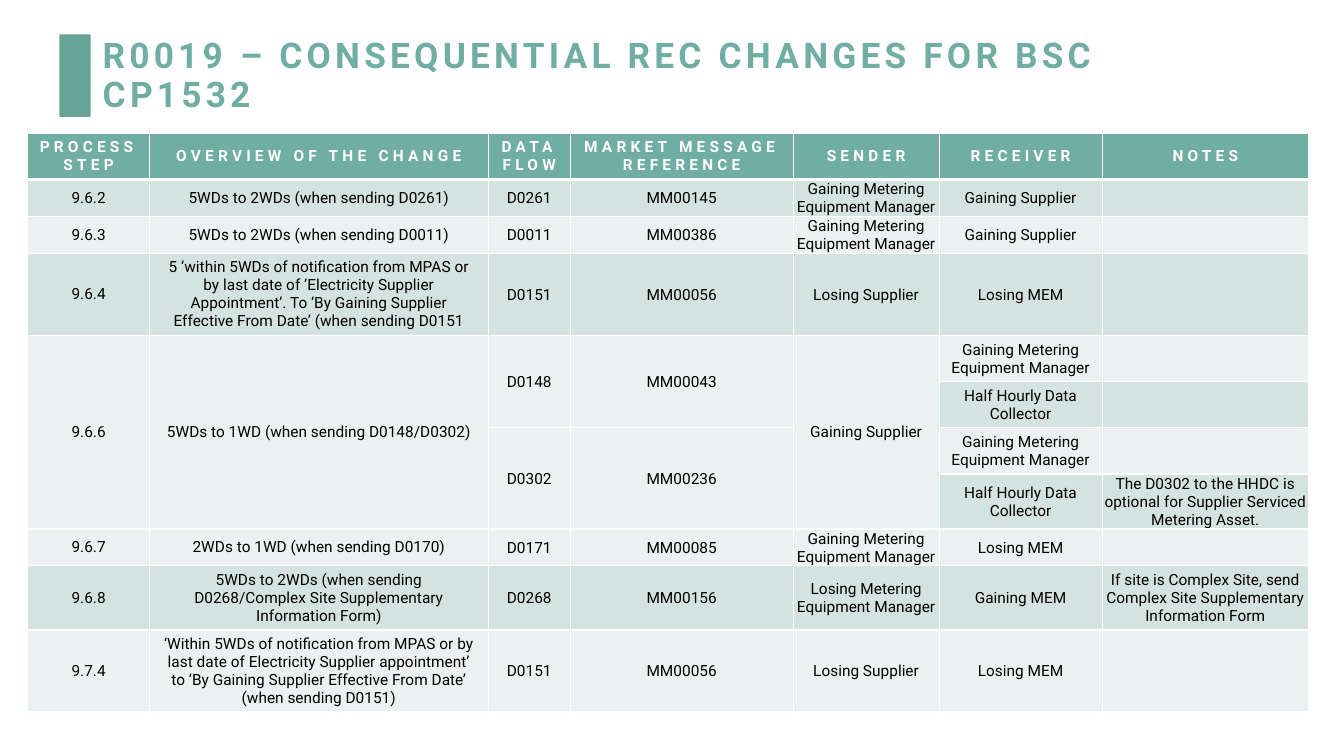
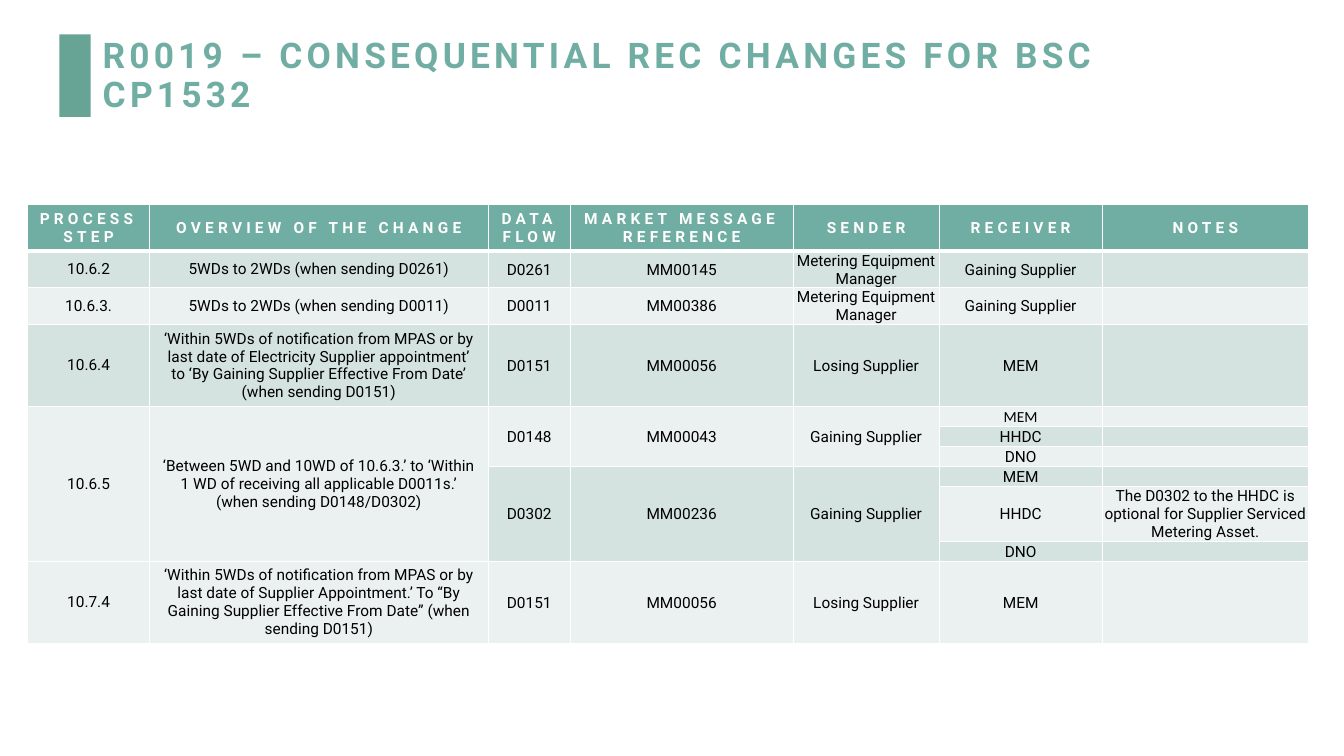
from lxml import etree
from pptx import Presentation
from pptx.dml.color import RGBColor
from pptx.enum.shapes import MSO_SHAPE
from pptx.enum.text import MSO_ANCHOR, MSO_AUTO_SIZE, PP_ALIGN
from pptx.oxml.ns import qn
from pptx.util import Pt

RECTANGLE = MSO_SHAPE.RECTANGLE
MIDDLE = MSO_ANCHOR.MIDDLE
NO_AUTOFIT = MSO_AUTO_SIZE.NONE
LEFT, CENTER = PP_ALIGN.LEFT, PP_ALIGN.CENTER

TEAL = RGBColor(0x70, 0xAD, 0xA3)
DARK_TEAL = RGBColor(0x68, 0xA4, 0x95)
BAND_DARK = RGBColor(0xD5, 0xE3, 0xE0)
BAND_LIGHT = RGBColor(0xEB, 0xF1, 0xF0)
WHITE = RGBColor(0xFF, 0xFF, 0xFF)
BLACK = RGBColor(0x00, 0x00, 0x00)

FONT = "Roboto"
SECOND_FONT = "Calibri"
TABLE_SIZE = 11
TITLE_ONLY = 5

TITLE = "R0019 – CONSEQUENTIAL REC CHANGES FOR BSC CP1532"
TITLE_BOX = (66.2, 28.8, 730.8, 51.8)
TITLE_BAR = (42.5, 24.5, 22.3, 59)

TABLE_LEFT = 19.8
COLUMN_WIDTHS = [87, 242, 58.5, 159.3, 104.3, 116.4, 147.5]
HEADERS = ["PROCESS STEP", "OVERVIEW OF THE CHANGE", "DATA FLOW",
           "MARKET MESSAGE REFERENCE", "SENDER", "RECEIVER", "NOTES"]

# Row heights by content
HEADER_ROW, ONE_LINE, TWO_LINES, TWO_LOOSE = 32.6, 13.3, 26.1, 33
THREE_LINES, THREE_LOOSE, FOUR_LOOSE = 38.9, 45.8, 58.6

GAINING_MANAGER = "Gaining Metering Equipment Manager"
MANAGER = "Metering Equipment Manager"
COLLECTOR = "Half Hourly Data Collector"
OPTIONAL_NOTE = ("The D0302 to the HHDC is optional for Supplier Serviced "
                 "Metering Asset.")
APPOINTMENT_CHANGE = (
    "‘Within 5WDs of notification from MPAS or by last date of Electricity "
    "Supplier appointment’ to ‘By Gaining Supplier Effective From Date’ "
    "(when sending D0151)")

# Each row: height, then cells; None continues the cell above
SECTION_9_ROWS = [
    (TWO_LINES, ["9.6.2", "5WDs to 2WDs (when sending D0261)", "D0261",
                 "MM00145", GAINING_MANAGER, "Gaining Supplier", ""]),
    (TWO_LINES, ["9.6.3", "5WDs to 2WDs (when sending D0011)", "D0011",
                 "MM00386", GAINING_MANAGER, "Gaining Supplier", ""]),
    (FOUR_LOOSE, ["9.6.4",
                  "5 ‘within 5WDs of notification from MPAS or by last date "
                  "of ‘Electricity Supplier Appointment’. To ‘By Gaining "
                  "Supplier Effective From Date’ (when sending D0151",
                  "D0151", "MM00056", "Losing Supplier", "Losing MEM", ""]),
    (TWO_LOOSE, ["9.6.6", "5WDs to 1WD (when sending D0148/D0302)", "D0148",
                 "MM00043", "Gaining Supplier", GAINING_MANAGER, ""]),
    (TWO_LOOSE, [None, None, None, None, None, COLLECTOR, ""]),
    (TWO_LOOSE, [None, None, "D0302", "MM00236", None, GAINING_MANAGER, ""]),
    (THREE_LINES, [None, None, None, None, None, COLLECTOR, OPTIONAL_NOTE]),
    (TWO_LINES, ["9.6.7", "2WDs to 1WD (when sending D0170)", "D0171",
                 "MM00085", GAINING_MANAGER, "Losing MEM", ""]),
    (THREE_LOOSE, ["9.6.8",
                   "5WDs to 2WDs (when sending D0268/Complex Site "
                   "Supplementary Information Form)",
                   "D0268", "MM00156", "Losing Metering Equipment Manager",
                   "Gaining MEM",
                   "If site is Complex Site, send Complex Site Supplementary "
                   "Information Form"]),
    (FOUR_LOOSE, ["9.7.4", APPOINTMENT_CHANGE, "D0151", "MM00056",
                  "Losing Supplier", "Losing MEM", ""]),
]
SECTION_10_ROWS = [
    (TWO_LINES, ["10.6.2", "5WDs to 2WDs (when sending D0261)", "D0261",
                 "MM00145", MANAGER, "Gaining Supplier", ""]),
    (TWO_LINES, ["10.6.3.", "5WDs to 2WDs (when sending D0011)", "D0011",
                 "MM00386", MANAGER, "Gaining Supplier", ""]),
    (FOUR_LOOSE, ["10.6.4", APPOINTMENT_CHANGE, "D0151", "MM00056",
                  "Losing Supplier", "MEM", ""]),
    (ONE_LINE, ["10.6.5",
                "‘Between 5WD and 10WD of 10.6.3.’ to ‘Within 1 WD of "
                "receiving all applicable D0011s.’ (when sending "
                "D0148/D0302)",
                "D0148", "MM00043", "Gaining Supplier", "MEM", ""]),
    (ONE_LINE, [None, None, None, None, None, "HHDC", ""]),
    (ONE_LINE, [None, None, None, None, None, "DNO", ""]),
    (ONE_LINE, [None, None, "D0302", "MM00236", "Gaining Supplier", "MEM", ""]),
    (THREE_LINES, [None, None, None, None, None, "HHDC", OPTIONAL_NOTE]),
    (ONE_LINE, [None, None, None, None, None, "DNO", ""]),
    (FOUR_LOOSE, ["10.7.4",
                  "‘Within 5WDs of notification from MPAS or by last date of "
                  "Supplier Appointment.’ To “By Gaining Supplier Effective "
                  "From Date” (when sending D0151)",
                  "D0151", "MM00056", "Losing Supplier", "MEM", ""]),
]


def add_run(paragraph, text, size, color, bold=False, spacing=0, font=FONT):
    run = paragraph.add_run()
    run.text = text
    run.font.name = font
    run.font.size = Pt(size)
    run.font.bold = bold
    run.font.color.rgb = color
    if spacing:
        run.font._element.set("spc", str(spacing * 100))


def add_title(slide, box, bar_box):
    # Accent bar
    bar = slide.shapes.add_shape(RECTANGLE, *map(Pt, bar_box))
    bar.shadow.inherit = False
    bar.fill.solid()
    bar.fill.fore_color.rgb = DARK_TEAL
    bar.line.fill.background()

    # Title text
    title = slide.shapes.title
    title.left, title.top, title.width, title.height = map(Pt, box)
    frame = title.text_frame
    frame.word_wrap = True
    frame.auto_size = NO_AUTOFIT
    frame.vertical_anchor = MIDDLE
    paragraph = frame.paragraphs[0]
    paragraph.alignment = LEFT
    paragraph.line_spacing = 0.9
    add_run(paragraph, TITLE, 25.2, TEAL, bold=True, spacing=3)


def set_borders(cell, top, bottom):
    properties = cell._tc.get_or_add_tcPr()
    for side, width in (("L", 1), ("R", 1), ("T", top), ("B", bottom)):
        line = etree.SubElement(properties, qn(f"a:ln{side}"),
                                w=str(int(Pt(width))))
        fill = etree.SubElement(line, qn("a:solidFill"))
        etree.SubElement(fill, qn("a:srgbClr"), val=str(WHITE))


def format_cell(cell, text, row, column, font):
    is_header = row == 0
    set_borders(cell, top=3 if row == 1 else 1, bottom=3 if is_header else 1)
    cell.fill.solid()
    if is_header:
        cell.fill.fore_color.rgb = TEAL
    else:
        cell.fill.fore_color.rgb = BAND_DARK if row % 2 else BAND_LIGHT
    cell.vertical_anchor = MIDDLE
    if not is_header and column >= 2:
        cell.margin_left = cell.margin_right = cell.margin_top = Pt(0.7)
        cell.margin_bottom = 0

    paragraph = cell.text_frame.paragraphs[0]
    paragraph.alignment = CENTER
    if text:
        add_run(paragraph, text, TABLE_SIZE, WHITE if is_header else BLACK,
                bold=is_header, spacing=3 if is_header else 0, font=font)
    else:
        # Keeps an empty cell from stretching its row
        etree.SubElement(paragraph._p, qn("a:endParaRPr"),
                         sz=str(TABLE_SIZE * 100))


def add_changes_table(slide, left, top, body_rows, other_fonts):
    rows = [(HEADER_ROW, HEADERS)] + body_rows
    frame = slide.shapes.add_table(
        len(rows), len(HEADERS), Pt(left), Pt(top),
        Pt(sum(COLUMN_WIDTHS)), Pt(sum(height for height, _ in rows)))
    table = frame.table
    table.horz_banding = False
    for column, width in zip(table.columns, COLUMN_WIDTHS):
        column.width = Pt(width)

    for row, (height, texts) in enumerate(rows):
        table.rows[row].height = Pt(height)
        for column, text in enumerate(texts):
            font = other_fonts.get((row, column), FONT)
            format_cell(table.cell(row, column), text, row, column, font)

    # Merge each cell with the continuations below it
    for column in range(len(HEADERS)):
        start = 0
        for row in range(1, len(rows) + 1):
            if row == len(rows) or rows[row][1][column] is not None:
                if row - start > 1:
                    table.cell(start, column).merge(table.cell(row - 1, column))
                start = row


def add_changes_slide(presentation, table_top, body_rows, other_fonts):
    slide = presentation.slides.add_slide(
        presentation.slide_layouts[TITLE_ONLY])
    add_title(slide, TITLE_BOX, TITLE_BAR)
    add_changes_table(slide, TABLE_LEFT, table_top, body_rows, other_fonts)


def main():
    presentation = Presentation()
    presentation.slide_width = Pt(960)
    presentation.slide_height = Pt(540)
    add_changes_slide(presentation, 95.3, SECTION_9_ROWS, {})
    add_changes_slide(presentation, 146.2, SECTION_10_ROWS,
                      {(4, 5): SECOND_FONT})
    presentation.save("out.pptx")


if __name__ == "__main__":
    main()
